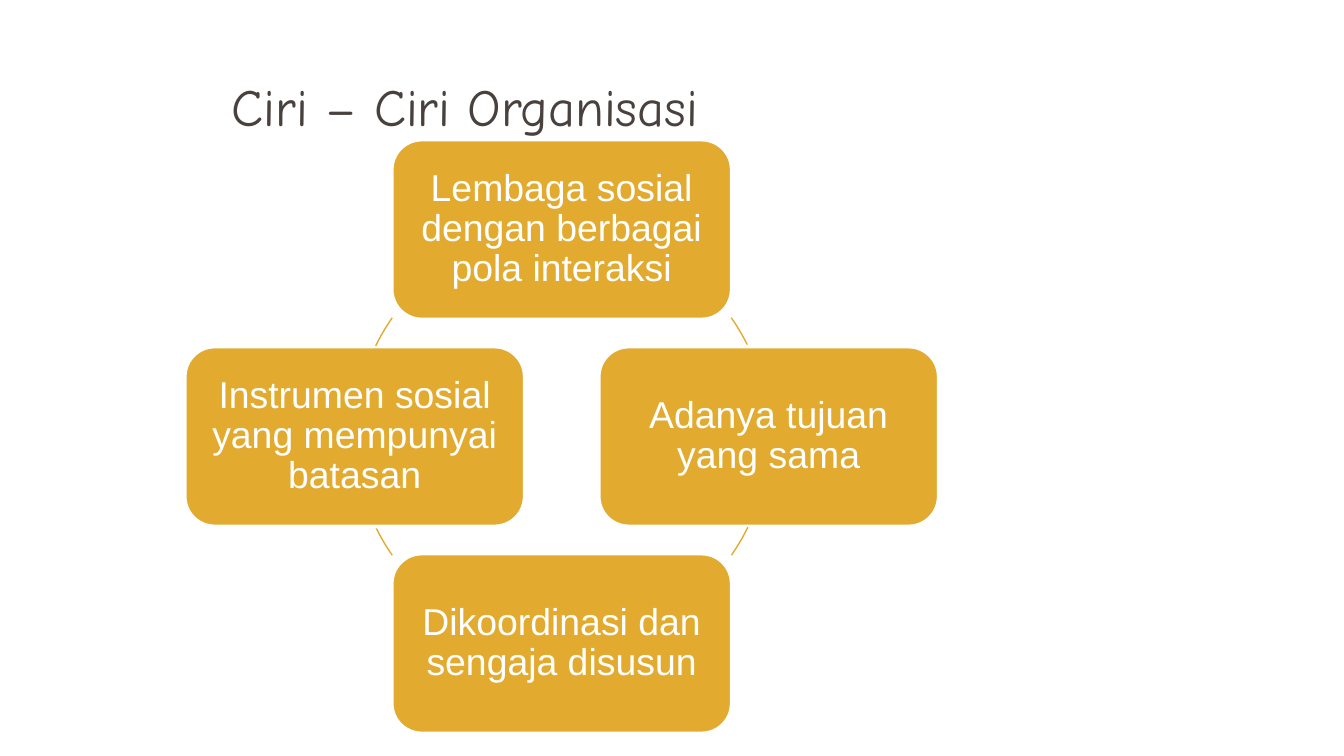
import math
from pptx import Presentation, util as u
from pptx.dml.color import RGBColor
from pptx.enum import shapes, text

deck = Presentation()
deck.slide_width = u.Inches(10)
deck.slide_height = deck.slide_width * 9 // 16
page = deck.slides.add_slide(deck.slide_layouts[6])
column, row = deck.slide_width / 100, deck.slide_height / 100

GOLD, WHITE, BROWN = "E2AB30", "FFFFFF", "49413E"
CENTRE_X, CENTRE_Y = 41.8, 57.75
RADIUS_X, RADIUS_Y = 15.4, 27.38
BOX_WIDTH, BOX_HEIGHT = 25.3, 23.8


def centred(x, y, width, height):
    return [int(length) for length in (
        (x - width / 2) * column, (y - height / 2) * row,
        width * column, height * row)]


def write(box, words, font, size, color, inset):
    frame = box.text_frame
    frame.word_wrap = True
    frame.vertical_anchor = text.MSO_ANCHOR.MIDDLE
    frame.margin_left = frame.margin_right = u.Inches(inset)
    frame.margin_top = frame.margin_bottom = u.Inches(inset)
    para = frame.paragraphs[0]
    para.text = words
    para.alignment = text.PP_ALIGN.CENTER
    para.line_spacing = 0.9
    para.font.name, para.font.size = font, u.Pt(size)
    para.font.color.rgb = RGBColor.from_string(color)


title = page.shapes.add_textbox(*centred(34.58, 14.5, 49.7, 12.44))
write(title, "Ciri – Ciri Organisasi", "Comic Neue", 28, BROWN, 0)

traits = [
    ("Lembaga sosial dengan berbagai pola interaksi", 270, (325, 334)),
    ("Adanya tujuan yang sama", 0, (26, 35)),
    ("Dikoordinasi dan sengaja disusun", 90, (145, 154)),
    ("Instrumen sosial yang mempunyai batasan", 180, (206, 215)),
]
for words, angle, sweep in traits:
    x = CENTRE_X + RADIUS_X * math.cos(math.radians(angle))
    y = CENTRE_Y + RADIUS_Y * math.sin(math.radians(angle))
    box = page.shapes.add_shape(shapes.MSO_SHAPE.ROUNDED_RECTANGLE,
                                *centred(x, y, BOX_WIDTH, BOX_HEIGHT))
    box.shadow.inherit = False
    box.fill.solid()
    box.fill.fore_color.rgb = RGBColor.from_string(GOLD)
    box.line.color.rgb = RGBColor.from_string(WHITE)
    box.line.width = u.Pt(2)
    write(box, words, "Arial", 20, WHITE, 0.08)

    arc = page.shapes.add_shape(shapes.MSO_SHAPE.ARC, *centred(
        CENTRE_X, CENTRE_Y, 2 * RADIUS_X, 2 * RADIUS_Y))
    arc.shadow.inherit = False
    arc.fill.background()
    arc.line.color.rgb = RGBColor.from_string(GOLD)
    arc.line.width = u.Pt(0.75)
    for index, degrees in enumerate(sweep):
        arc.adjustments[index] = degrees * 0.6

deck.save("out.pptx")
